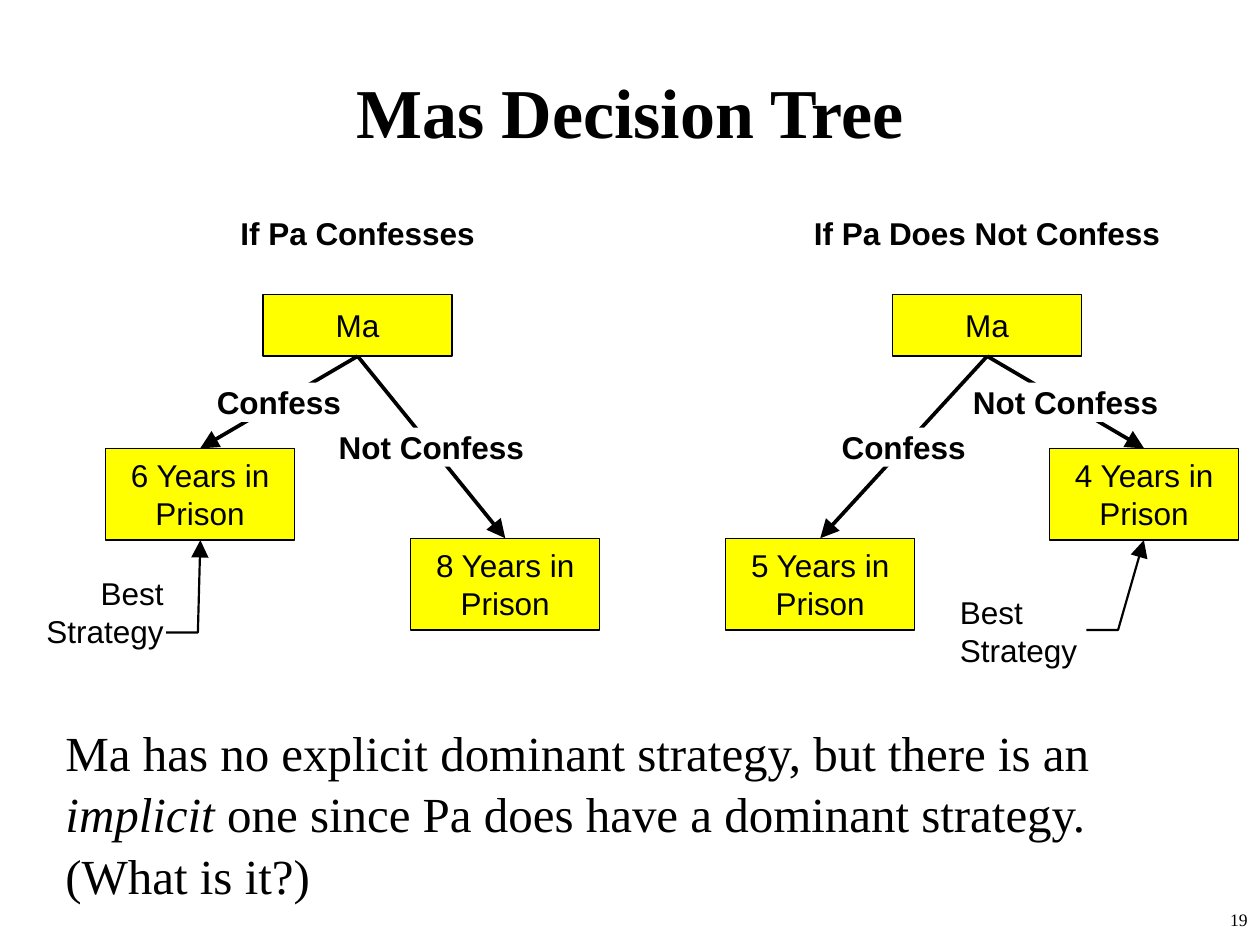
from lxml.etree import SubElement
from pptx import Presentation
from pptx.dml.color import RGBColor
from pptx.enum.shapes import MSO_CONNECTOR as Connector, MSO_SHAPE as Shape
from pptx.enum.text import MSO_ANCHOR as Anchor, PP_ALIGN as Align
from pptx.oxml.ns import qn
from pptx.util import Cm, Pt

COLORS = {"ink": "000000", "node": "FFFF00", "paper": "FFFFFF"}
SERIF, SANS = "Times New Roman", "Arial"
NODE_WIDTH, ROOT_HEIGHT, OUTCOME_HEIGHT = 3.81, 1.24, 1.85
LABEL_WIDTHS = {"Confess": 2.57, "Not Confess": 3.78}
NEAR, FAR = 4.72, 6.53  # drop from the tree's top to an outcome


def color(name):
    return RGBColor.from_string(COLORS[name])


def write(frame, text, size=18, font=SANS, bold=False, italic=False,
          align=Align.LEFT, anchor=Anchor.TOP, spacing=None):
    """Append a run to the frame's paragraph and format it."""
    frame.word_wrap = True
    frame.vertical_anchor = anchor
    paragraph = frame.paragraphs[0]
    paragraph.alignment = align
    paragraph.line_spacing = spacing
    run = paragraph.add_run()
    run.text = text
    run.font.size, run.font.name = Pt(size), font
    run.font.bold, run.font.italic = bold, italic
    run.font.color.rgb = color("ink")


def add_text(slide, left, top, width, height, text, margin=0.0, **style):
    box = slide.shapes.add_textbox(Cm(left), Cm(top), Cm(width), Cm(height))
    frame = box.text_frame
    frame.margin_left = frame.margin_right = Cm(margin)
    frame.margin_top = frame.margin_bottom = Cm(margin / 2)
    write(frame, text, **style)
    return box


def add_node(slide, center, top, height, text):
    node = slide.shapes.add_shape(Shape.RECTANGLE, Cm(center - NODE_WIDTH / 2),
                                  Cm(top), Cm(NODE_WIDTH), Cm(height))
    node.shadow.inherit = False
    node.fill.solid()
    node.fill.fore_color.rgb = color("node")
    node.line.color.rgb = color("ink")
    node.line.width = Pt(0.75)
    write(node.text_frame, text, align=Align.CENTER, anchor=Anchor.MIDDLE)


def style_arrow(shape, width):
    shape.line.color.rgb = color("ink")
    shape.line.width = Pt(width)
    line = shape.line._get_or_add_ln()
    SubElement(line, qn("a:tailEnd"), type="triangle", w="lg", len="lg")


def add_branch(slide, start, end, label):
    """Arrow with its label on a white patch at the midpoint."""
    arrow = slide.shapes.add_connector(Connector.STRAIGHT,
                                       *(Cm(value) for value in start + end))
    style_arrow(arrow, 2.13)
    SubElement(arrow._element.spPr, qn("a:effectLst"))
    width, height = LABEL_WIDTHS[label], 0.79
    patch = add_text(slide, (start[0] + end[0] - width) / 2,
                     (start[1] + end[1] - height) / 2, width, height, label,
                     bold=True, align=Align.CENTER, anchor=Anchor.MIDDLE)
    patch.fill.solid()
    patch.fill.fore_color.rgb = color("paper")


def add_tree(slide, left, top, width, heading, branches):
    """Draw one tree; branches are (label, outcome, drop), left then right."""
    apex = left + width / 2 + 0.1
    add_text(slide, apex - 4, top, 8, 0.89, heading, bold=True, align=Align.CENTER)
    root_top = top + 1.62
    root_bottom = root_top + ROOT_HEIGHT
    add_node(slide, apex, root_top, ROOT_HEIGHT, "Ma")
    centers = (left + NODE_WIDTH / 2, left + width - NODE_WIDTH / 2)
    for center, (label, outcome, drop) in zip(centers, branches):
        add_node(slide, center, top + drop, OUTCOME_HEIGHT, outcome)
        add_branch(slide, (apex, root_bottom), (center, top + drop), label)


def add_best_strategy(slide, left, top, align, elbow_y, tip):
    """Note whose bent arrow points up at the preferred outcome."""
    width = 2.5
    add_text(slide, left, top, width, 1.5, "Best Strategy", align=align)
    start = left + width + 0.05
    builder = slide.shapes.build_freeform(Cm(start), Cm(elbow_y))
    builder.add_line_segments([(Cm(start + 0.64), Cm(elbow_y)),
                               (Cm(tip[0]), Cm(tip[1]))], close=False)
    pointer = builder.convert_to_shape()
    pointer.shadow.inherit = False
    pointer.fill.background()
    style_arrow(pointer, 1.25)


def add_title(slide, left, top, width, height, text):
    title = slide.shapes.title
    title.left, title.top = Cm(left), Cm(top)
    title.width, title.height = Cm(width), Cm(height)
    write(title.text_frame, text, size=40, font=SERIF, bold=True,
          align=Align.CENTER, anchor=Anchor.MIDDLE)


def add_conclusion(slide, left, top, width, height):
    style = {"size": 28, "font": SERIF, "spacing": 1.04}
    box = add_text(slide, left, top, width, height,
                   "Ma has no explicit dominant strategy, but there is an ",
                   margin=0.25, **style)
    write(box.text_frame, "implicit", italic=True, **style)
    write(box.text_frame,
          " one since Pa does have a dominant strategy. (What is it?)", **style)


def main():
    presentation = Presentation()
    presentation.slide_width, presentation.slide_height = Cm(25.4), Cm(19.05)
    slide = presentation.slides.add_slide(presentation.slide_layouts[5])

    add_title(slide, 1.9, 0.64, 21.6, 3.18, "Mas Decision Tree")

    # Decision trees
    tree_top = 4.32
    add_tree(slide, 2.13, tree_top, 9.96, "If Pa Confesses",
             [("Confess", "6 Years in Prison", NEAR),
              ("Not Confess", "8 Years in Prison", FAR)])
    add_tree(slide, 14.63, tree_top, 10.34, "If Pa Does Not Confess",
             [("Confess", "5 Years in Prison", FAR),
              ("Not Confess", "4 Years in Prison", NEAR)])

    # Preferred outcomes
    tip_y = tree_top + NEAR + OUTCOME_HEIGHT
    add_best_strategy(slide, 0.8, 11.58, Align.RIGHT, 12.75, (4.04, tip_y))
    add_best_strategy(slide, 19.35, 11.96, Align.LEFT, 12.7, (23.06, tip_y))

    # Conclusion and page number
    add_conclusion(slide, 1.07, 14.4, 22.66, 3.84)
    add_text(slide, 20.12, 18.21, 5.28, 0.84, "19", margin=0.25, size=10,
             font=SERIF, align=Align.RIGHT)

    presentation.save("out.pptx")


if __name__ == "__main__":
    main()
